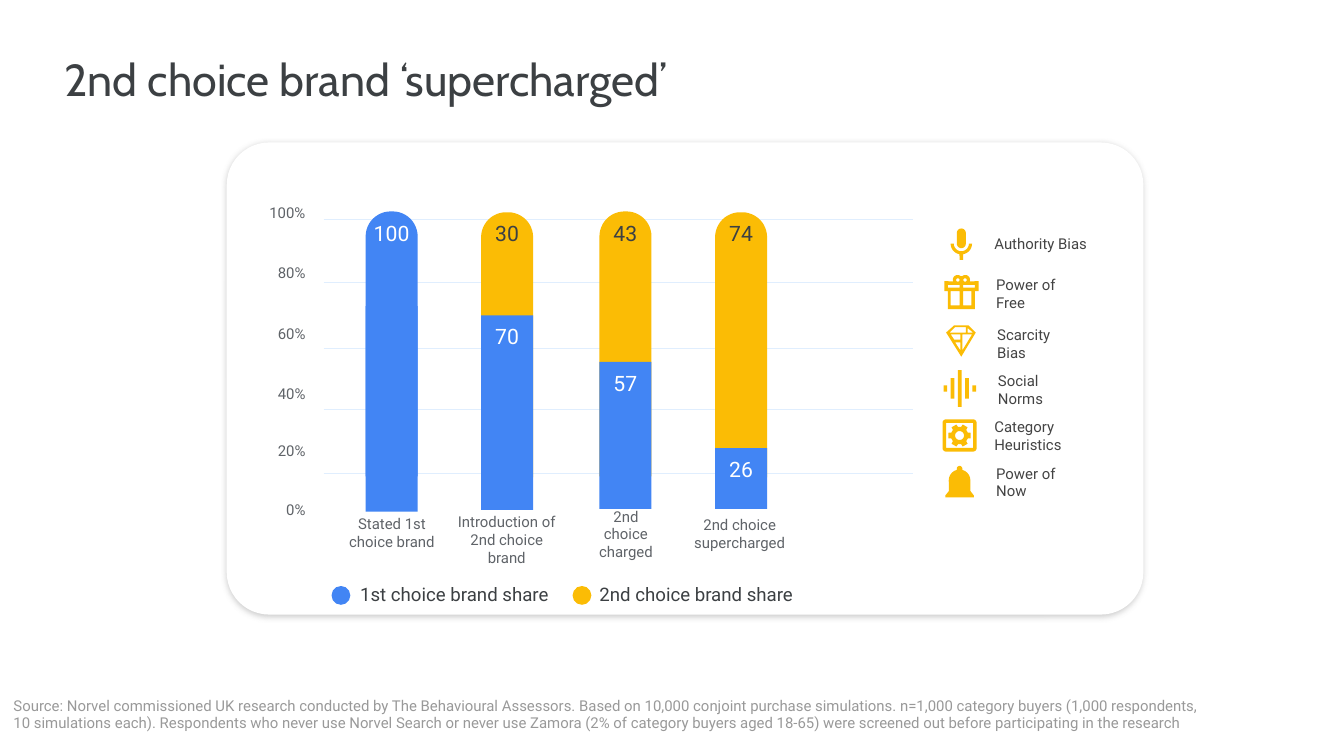
from math import cos, radians, sin

from lxml import etree
from pptx import Presentation
from pptx.dml.color import RGBColor
from pptx.enum.shapes import MSO_CONNECTOR, MSO_SHAPE
from pptx.enum.text import MSO_ANCHOR, MSO_AUTO_SIZE, PP_ALIGN
from pptx.oxml import parse_xml
from pptx.oxml.ns import nsdecls, qn
from pptx.util import Pt

LEFT, CENTER, RIGHT = PP_ALIGN.LEFT, PP_ALIGN.CENTER, PP_ALIGN.RIGHT
TOP, MIDDLE = MSO_ANCHOR.TOP, MSO_ANCHOR.MIDDLE
RECT, OVAL = MSO_SHAPE.RECTANGLE, MSO_SHAPE.OVAL
CARD, CAP = MSO_SHAPE.ROUNDED_RECTANGLE, MSO_SHAPE.ROUND_2_SAME_RECTANGLE
COLORS = {
    "white": "FFFFFF", "ink": "3C4043", "axis": "5F6368", "label": "434343",
    "source": "999999", "grid": "E0EEFE", "blue": "4285F4", "yellow": "FBBC05",
}
RGB = {name: RGBColor.from_string(value) for name, value in COLORS.items()}


def add_text(text, x, y, w, h, size=12, color="axis", font="Roboto",
             align=LEFT, anchor=TOP, inset=10.8, sp=None):
    """Write text in a new box, or in sp when given; newlines part paragraphs."""
    sp = sp or shapes.add_textbox(0, 0, 0, 0)
    sp.left, sp.top, sp.width, sp.height = Pt(x), Pt(y), Pt(w), Pt(h)
    tf = sp.text_frame
    tf.text = text
    tf.word_wrap, tf.auto_size = True, MSO_AUTO_SIZE.NONE
    tf.vertical_anchor = anchor
    tf.margin_left = tf.margin_top = tf.margin_right = tf.margin_bottom = Pt(inset)
    for p in tf.paragraphs:
        p.alignment = align
        for r in p.runs:
            r.font.size, r.font.name = Pt(size), font
            r.font.color.rgb = RGB[color]


def polar(cx, cy, radius, angles):
    """Points around a centre; angles run clockwise from the right."""
    return [(cx + radius * cos(radians(a)), cy + radius * sin(radians(a)))
            for a in angles]


prs = Presentation()
prs.slide_width, prs.slide_height = Pt(1080), Pt(607.5)
s = prs.slides.add_slide(prs.slide_layouts[5])
shapes = s.shapes

add_text("2nd choice brand ‘supercharged’", 41, 31, 921, 49, size=36,
         color="ink", font="Cabin", sp=shapes.title)

# Card, bars and legend dots: kind, left, top, width, height, fill, corner
BAR_W, CAP_H = 41.8, 213
columns = [  # left, top, split, bottom, cap colour, top value, lower value
    (293.8, 169.9, 246, 411.1, "blue", "100", ""),
    (386.6, 170.6, 253.4, 409.7, "yellow", "30", "70"),
    (481.7, 169.9, 290.9, 409, "yellow", "43", "57"),
    (574.6, 170.6, 360, 409, "yellow", "74", "26"),
]
blocks = [(CARD, 182.2, 114.5, 736.6, 379.4, "white", 0.09)]
for x, top, split, bottom, cap, _, _ in columns:
    blocks.append((CAP, x, top, BAR_W, CAP_H, cap, 0.48))
    blocks.append((RECT, x, split, BAR_W, bottom - split, "blue", None))
for x, color in ((266.4, "blue"), (460.1, "yellow")):
    blocks.append((OVAL, x, 470.9, 15.1, 15.1, color, None))

for kind, x, y, w, h, color, corner in blocks:
    sp = shapes.add_shape(kind, Pt(x), Pt(y), Pt(w), Pt(h))
    sp.shadow.inherit = False
    sp.fill.solid()
    sp.fill.fore_color.rgb = RGB[color]
    sp.line.fill.background()
    if corner:
        sp.adjustments[0] = corner
    if kind == CARD:
        effects = sp._element.spPr.find(qn("a:effectLst"))
        effects.append(parse_xml(
            f'<a:outerShdw {nsdecls("a")} blurRad="{Pt(4.5)}" dist="{Pt(1.5)}" '
            f'dir="5400000" algn="bl" rotWithShape="0"><a:srgbClr val="999999">'
            f'<a:alpha val="50000"/></a:srgbClr></a:outerShdw>'))
        for y in (380.2, 329, 280.1, 226.8, 176.4):
            line = shapes.add_connector(MSO_CONNECTOR.STRAIGHT,
                                        Pt(260), Pt(y), Pt(733.7), Pt(y))
            line.line.color.rgb = RGB["grid"]
            line.line.width = Pt(0.75)
            etree.SubElement(line._element.spPr, qn("a:effectLst"))

for x, _, split, _, cap, upper, lower in columns:
    upper_color = "white" if cap == "blue" else "ink"
    for text, y, color in ((upper, 169.5, upper_color), (lower, split - 1, "white")):
        if text:
            add_text(text, x - 10.4, y, 62.6, 36, size=17, color=color,
                     align=CENTER, anchor=MIDDLE)

for i, y in enumerate((395.3, 347.8, 301.7, 253.4, 204.5, 156.2)):
    add_text(f"{i * 20}%", 204.5, y, 51.8, 14.4, align=RIGHT)

for text, x, y, w in (
    ("Stated 1st choice brand", 267.1, 409.7, 95.8),
    ("Introduction of 2nd choice brand", 355, 415.4, 104.4),
    ("2nd choice charged", 463, 411.1, 79.9),
    ("2nd choice supercharged", 545.8, 411.1, 97.2),
):
    add_text(text, x, y, w, 36, align=CENTER, anchor=MIDDLE)

for text, x in (("1st choice brand share", 278.6), ("2nd choice brand share", 470.9)):
    add_text(text, x, 457.9, 179.3, 28.8, size=15, color="ink")

for text, x, y, w in (
    ("Authority Bias", 792, 182.9, 91.4),
    ("Power of Free", 793.4, 223.2, 66.2),
    ("Scarcity Bias", 794.2, 262.8, 64.1),
    ("Social Norms", 794.9, 300.2, 67),
    ("Category\nHeuristics", 792, 337, 82.1),
    ("Power of Now", 793.4, 374.4, 79.9),
):
    add_text(text, x, y, w, 25.9, color="label", anchor=MIDDLE, inset=7.2)

# Icons: left, top, rectangles (left, top, right, bottom), other outlines
circle = range(0, 360, 15)
gear = [p for a in range(0, 360, 60)
        for d, radius in ((-20, 7), (-14, 9.2), (14, 9.2), (20, 7))
        for p in polar(13.7, 13, radius, [a + d])]
frame = [p for cx, cy, a in ((2.9, 2.9, 180), (24.5, 2.9, 270),
                             (24.5, 23, 0), (2.9, 23, 90))
         for p in polar(cx, cy, 2.9, range(a, a + 91, 15))]
microphone = (763.9, 183.6, [], [
    polar(8.6, 3.6, 3.6, range(180, 361, 15)) + polar(8.6, 12.2, 3.6, range(0, 181, 15)),
    polar(8.6, 12.2, 8.6, range(180, 99, -10)) + [(7.2, 25.2), (10.1, 25.2)]
    + polar(8.6, 12.2, 8.6, range(80, -1, -10)) + polar(8.6, 12.2, 6.1, range(0, 181, 15)),
])
gift = (758.9, 221, [
    (2.9, 7.9, 12.2, 10.1), (15.1, 7.9, 24.5, 10.1),
    (5, 13, 12.2, 24.5), (15.1, 13, 21.6, 24.5),
], [
    [(0, 5)] + polar(10.6, 3.8, 3.8, range(160, 311, 15))
    + polar(16.8, 3.8, 3.8, range(230, 381, 15))
    + [(27.4, 5), (27.4, 13), (24.5, 13), (24.5, 27.4), (2.9, 27.4), (2.9, 13), (0, 13)],
    polar(10.8, 4, 1.4, circle), polar(16.6, 4, 1.4, circle),
])
diamond = (760.3, 261.4, [], [
    [(6.5, 0), (0, 5.8), (12.2, 25.2), (23.8, 5.8), (18, 0)],
    [(15.8, 1.4), (15.8, 5.8), (2.9, 5.8), (7.2, 1.4)],
    [(17.3, 2.2), (21.6, 5.8), (17.3, 5.8)],
    [(11.5, 7.2), (11.5, 11.5), (6.5, 11.5), (3.6, 7.2)],
    [(20.9, 7.2), (13, 20.2), (13, 7.2)],
    [(11.5, 13.7), (11.5, 20.2), (7.2, 13.7)],
])
sound = (758.2, 297.4, [
    (i * 5.8, top, i * 5.8 + 2.9, 29.5 - top)
    for i, top in enumerate((12.2, 6.5, 0, 6.5, 12.2))
], [])
settings = (757.4, 337, [(2.9, 2.9, 24.5, 23)],
            [frame, gear, polar(13.7, 13, 3.6, circle)])
bell = (759.6, 374.4, [], [
    polar(11.5, 2.2, 2.2, range(180, 361, 15)) + polar(11.5, 11.6, 8.7, range(-75, 1, 15))
    + [(20.2, 20.2), (23, 23.8), (23, 25.2), (0, 25.2), (0, 23.8), (2.9, 20.2)]
    + polar(11.5, 11.6, 8.7, range(180, 256, 15)),
])

for x, y, rects, outlines in (microphone, gift, diamond, sound, settings, bell):
    contours = outlines + [[(l, t), (r, t), (r, b), (l, b)] for l, t, r, b in rects]
    builder = None
    for contour in contours:
        points = [(px * 100, py * 100) for px, py in contour]
        if builder is None:
            builder = shapes.build_freeform(*points[0], scale=Pt(0.01))
        else:
            builder.move_to(*points[0])
        builder.add_line_segments(points[1:], close=True)
    sp = builder.convert_to_shape(Pt(x), Pt(y))
    sp.shadow.inherit = False
    sp.fill.solid()
    sp.fill.fore_color.rgb = RGB["yellow"]
    sp.line.fill.background()

add_text("Source: Norvel commissioned UK research conducted by The Behavioural Assessors. "
         "Based on 10,000 conjoint purchase simulations. n=1,000 category buyers "
         "(1,000 respondents, 10 simulations each). Respondents who never use Norvel "
         "Search or never use Zamora (2% of category buyers aged 18-65) were screened "
         "out before participating in the research",
         0, 548.6, 978.5, 58, color="source")

prs.save("out.pptx")
